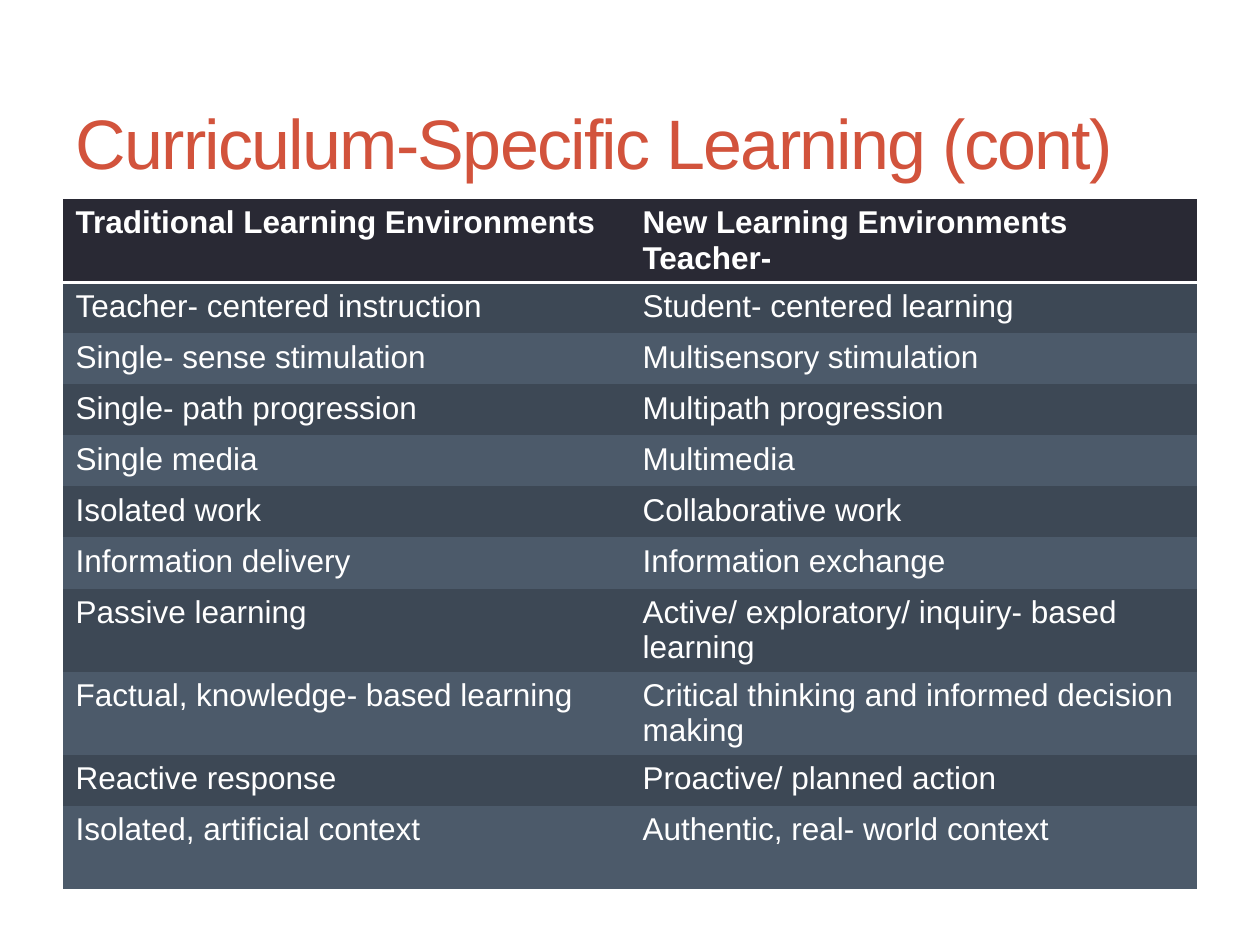
import pptx
import pptx.dml.color
import pptx.enum.text
import pptx.oxml
import pptx.oxml.ns
import pptx.util
from pptx.util import Inches


def rgb(value):
    return pptx.dml.color.RGBColor.from_string(value)


def style_run(run, size, color, bold=False):
    run.font.name = "Arial"
    run.font.size = pptx.util.Pt(size)
    run.font.bold = bold
    run.font.color.rgb = rgb(color)


presentation = pptx.Presentation()
presentation.slide_width = Inches(10)
presentation.slide_height = Inches(7.5)
slide = presentation.slides.add_slide(presentation.slide_layouts[5])

# Title
title = slide.shapes.title
title.left, title.top = Inches(0.5), Inches(0.58)
title.width, title.height = Inches(9), Inches(1.08)
title.text_frame.text = "Curriculum-Specific Learning (cont)"
title.text_frame.auto_size = pptx.enum.text.MSO_AUTO_SIZE.NONE
title.text_frame.vertical_anchor = pptx.enum.text.MSO_ANCHOR.MIDDLE
heading = title.text_frame.paragraphs[0]
heading.alignment = pptx.enum.text.PP_ALIGN.LEFT
style_run(heading.runs[0], 40, "D2533C")
heading.runs[0].font._element.set("spc", "-100")

# Comparison of learning environments
environments = [
    ("Traditional Learning Environments", "New Learning Environments Teacher-"),
    ("Teacher- centered instruction", "Student- centered learning"),
    ("Single- sense stimulation", "Multisensory stimulation"),
    ("Single- path progression", "Multipath progression"),
    ("Single media", "Multimedia"),
    ("Isolated work", "Collaborative work"),
    ("Information delivery", "Information exchange"),
    ("Passive learning", "Active/ exploratory/ inquiry- based learning"),
    ("Factual, knowledge- based learning",
     "Critical thinking and informed decision making"),
    ("Reactive response", "Proactive/ planned action"),
    ("Isolated, artificial context", "Authentic, real- world context"),
]
row_count = len(environments)
comparison = slide.shapes.add_table(
    row_count, 2, Inches(0.5), Inches(1.58), Inches(9), Inches(4.46)).table

# Plain table style without grid lines
style_id = comparison._tbl.tblPr.find(pptx.oxml.ns.qn("a:tableStyleId"))
style_id.text = "{2D5ABB26-0587-4C30-8999-92F81FD0307C}"

for row, texts in enumerate(environments):
    is_header = row == 0
    band = "292934" if is_header else ("4C5A6A", "3D4855")[row % 2]
    for column, text in enumerate(texts):
        cell = comparison.cell(row, column)
        cell.text_frame.text = text
        style_run(cell.text_frame.paragraphs[0].runs[0], 18, "FFFFFF", is_header)
        cell.fill.solid()
        cell.fill.fore_color.rgb = rgb(band)
        if is_header:
            # White rule below the header
            rule = pptx.oxml.parse_xml(
                f'<a:lnB {pptx.oxml.ns.nsdecls("a")} w="25400"><a:solidFill>'
                '<a:srgbClr val="FFFFFF"/></a:solidFill></a:lnB>')
            cell._tc.get_or_add_tcPr().insert(0, rule)

# The last row is taller than the others
comparison.rows[row_count - 1].height = Inches(0.66)

presentation.save("out.pptx")
